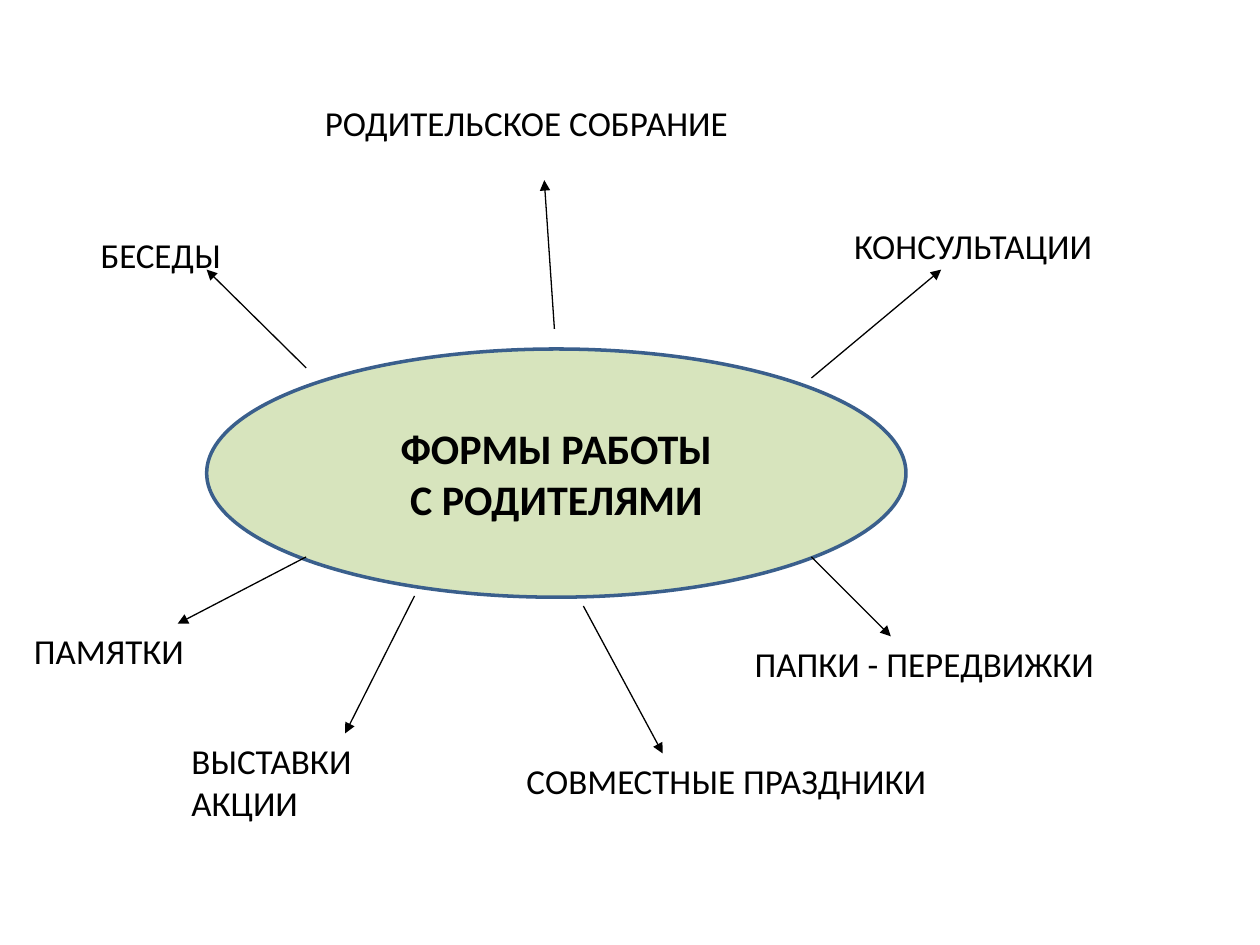
from dataclasses import dataclass

import pptx
import pptx.dml.color
import pptx.enum.shapes
import pptx.enum.text
import pptx.oxml.ns
import pptx.util
from lxml import etree
from pptx.util import Inches

Align = pptx.enum.text.PP_ALIGN
Anchor = pptx.enum.text.MSO_ANCHOR


@dataclass(frozen=True)
class Theme:
    font: str = "Calibri"
    ink: str = "000000"
    fill: str = "D7E4BD"
    edge: str = "3A5F8C"
    title: float = 24
    label: float = 20
    rim: float = 2
    thin: float = 0.75


@dataclass(frozen=True)
class Form:
    """A form of work: its label box, and the arrow that leads to it."""
    text: str
    box: tuple[float, float, float, float]
    start: tuple[float, float]
    end: tuple[float, float]


THEME = Theme()
HUB = (1.64, 2.77, 5.55, 1.97)
FORMS = [
    Form("РОДИТЕЛЬСКОЕ СОБРАНИЕ", (2.48, 0.76, 4.06, 0.41), (4.4, 2.61), (4.32, 1.43)),
    Form("КОНСУЛЬТАЦИИ", (6.68, 1.73, 2.42, 0.41), (6.44, 3), (7.47, 2.14)),
    Form("БЕСЕДЫ", (0.7, 1.8, 1.39, 0.41), (2.43, 2.92), (1.64, 2.14)),
    Form("ПАПКИ - ПЕРЕДВИЖКИ", (5.89, 5.05, 3.33, 0.41), (6.44, 4.42), (7.07, 5.05)),
    Form("ПАМЯТКИ", (0.17, 4.95, 1.55, 0.41), (2.43, 4.42), (1.41, 4.95)),
    Form("ВЫСТАВКИ\nАКЦИИ", (1.42, 5.82, 1.69, 0.84), (3.29, 4.73), (2.74, 5.82)),
    Form("СОВМЕСТНЫЕ ПРАЗДНИКИ", (4.08, 5.98, 3.95, 0.41), (4.63, 4.81), (5.26, 5.98)),
]


def color(code: str) -> pptx.dml.color.RGBColor:
    return pptx.dml.color.RGBColor.from_string(code)


def write(shape, text: str, *, size: float, bold: bool = False,
          align=Align.LEFT, anchor=Anchor.TOP) -> None:
    frame = shape.text_frame
    frame.text = text
    frame.word_wrap = True
    frame.vertical_anchor = anchor
    for para in frame.paragraphs:
        para.alignment = align
        for run in para.runs:
            run.font.name = THEME.font
            run.font.size = pptx.util.Pt(size)
            run.font.bold = bold
            run.font.color.rgb = color(THEME.ink)


def draw_hub(slide) -> None:
    hub = slide.shapes.add_shape(
        pptx.enum.shapes.MSO_SHAPE.OVAL, *map(Inches, HUB))
    hub.shadow.inherit = False
    hub.fill.solid()
    hub.fill.fore_color.rgb = color(THEME.fill)
    hub.line.color.rgb = color(THEME.edge)
    hub.line.width = pptx.util.Pt(THEME.rim)
    write(hub, "ФОРМЫ РАБОТЫ\nС РОДИТЕЛЯМИ", size=THEME.title, bold=True,
          align=Align.CENTER, anchor=Anchor.MIDDLE)


def draw_label(slide, form: Form) -> None:
    box = slide.shapes.add_textbox(*map(Inches, form.box))
    write(box, form.text, size=THEME.label)


def draw_arrow(slide, form: Form) -> None:
    arrow = slide.shapes.add_connector(
        pptx.enum.shapes.MSO_CONNECTOR.STRAIGHT,
        *map(Inches, form.start + form.end))
    arrow.line.color.rgb = color(THEME.ink)
    arrow.line.width = pptx.util.Pt(THEME.thin)
    qn = pptx.oxml.ns.qn
    etree.SubElement(arrow.line._get_or_add_ln(), qn("a:tailEnd"), type="triangle")
    etree.SubElement(arrow._element.spPr, qn("a:effectLst"))


def main() -> None:
    deck = pptx.Presentation()
    deck.slide_width, deck.slide_height = Inches(10), Inches(7.5)
    slide = deck.slides.add_slide(deck.slide_layouts[6])
    draw_hub(slide)
    for form in FORMS:
        draw_label(slide, form)
    for form in FORMS:
        draw_arrow(slide, form)
    deck.save("out.pptx")


if __name__ == "__main__":
    main()
